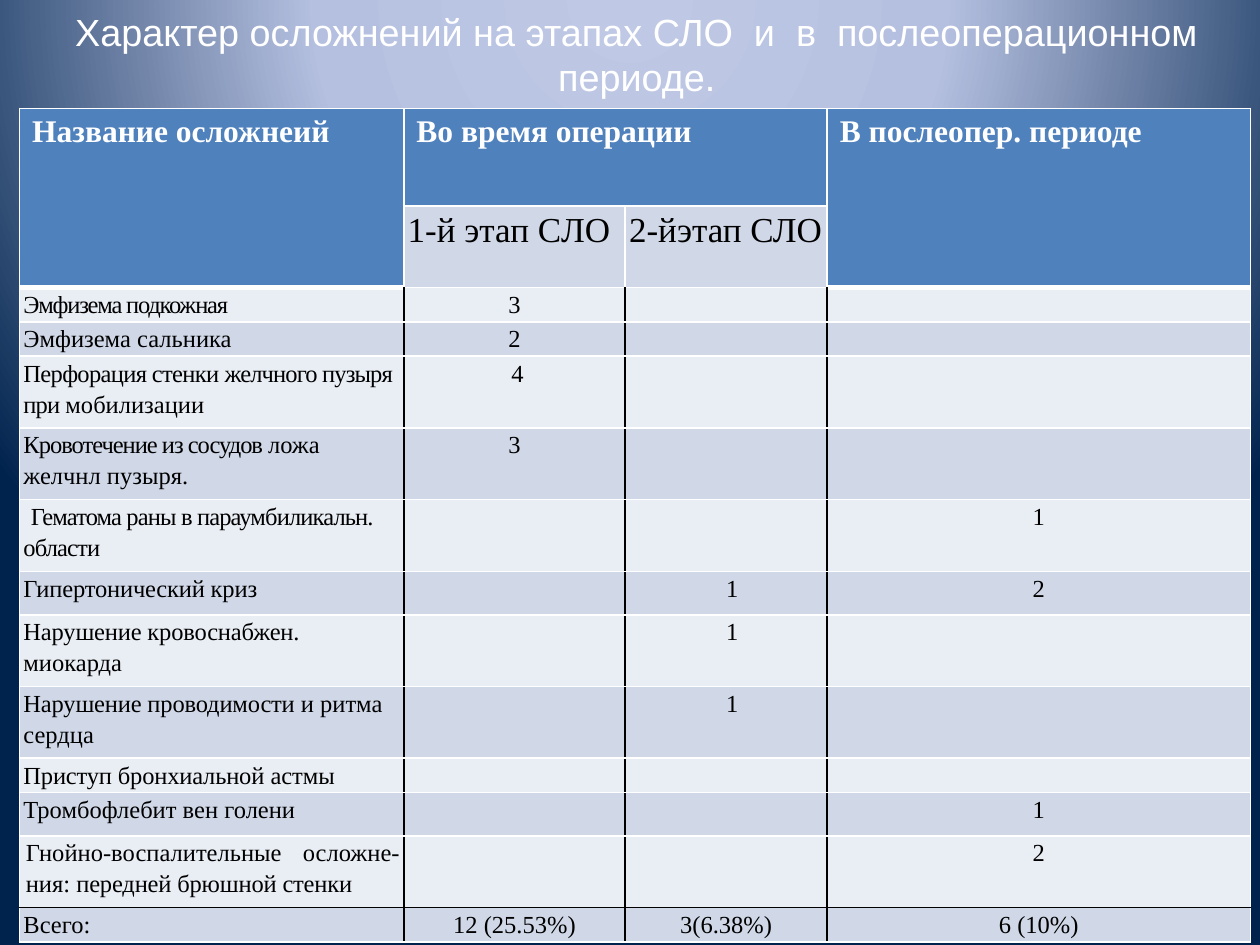
from lxml import etree
from pptx import Presentation
from pptx.dml.color import RGBColor
from pptx.enum.text import MSO_ANCHOR, PP_ALIGN
from pptx.oxml import parse_xml
from pptx.oxml.ns import qn
from pptx.util import Pt

LEFT, MID, JUST = PP_ALIGN.LEFT, PP_ALIGN.CENTER, PP_ALIGN.JUSTIFY
CENTER = MSO_ANCHOR.MIDDLE
SERIF = "Times New Roman"
WHITE, BLACK, BLUE = "FFFFFF", "000000", "4F81BD"
BANDS = ("E9EDF4", "D0D8E8")
COLS = (219.6, 126.5, 115.4, 241.9)
HEADS = (55.7, 46.8)
TITLE = "Характер осложнений на этапах СЛО  и  в  послеоперационном периоде."

# Row height, name runs (text, letter spacing), the three counts
ROWS = [
    (19.6, [("Эмфизема подкожная", -0.7)], ("3", "", "")),
    (19.6, [("Эмфизема сальника", 0)], ("2", "", "")),
    (41, [("Перфорация стенки ", -0.4), ("желчного пузыря при ", -0.5),
          ("мобилизации", 0)], ("4", "", "")),
    (41, [("Кровотечение из сосудов ", -0.6), ("ложа желчнл пузыря.", 0)],
     ("3", "", "")),
    (41, [("Гематома раны в параумбиликальн. области", -0.5)], ("", "", "1")),
    (24.8, [("Гипертонический криз", -0.1)], ("", "1", "2")),
    (41, [("Нарушение кровоснабжен. ", -0.1), ("миокарда", 0)], ("", "1", "")),
    (41, [("Нарушение проводимости ", -0.1), ("и ритма сердца", 0)],
     ("", "1", "")),
    (19.6, [("Приступ бронхиальной ", -0.1), ("астмы", 0)], ("", "", "")),
    (24.8, [("Тромбофлебит вен голени", 0)], ("", "", "1")),
    (41, [("Гнойно-воспалительные осложне-ния: ", 0),
          ("передней брюшной стенки", -0.1)], ("", "", "2")),
    (19.6, [("Всего:", 0)], ("12 (25.53%)", "3(6.38%)", "6 (10%)")),
]
LAST = len(HEADS) + len(ROWS) - 1


def color(code):
    return RGBColor.from_string(code)


def paint(slide):
    """Radial gradient background."""
    stops = ((0, "BFC9E5"), (40, "B5C0E0"), (100, "00234D"))
    marks = "".join(f'<a:gs pos="{at * 1000}"><a:srgbClr val="{code}"/></a:gs>'
                    for at, code in stops)
    slide.element.cSld.insert(0, parse_xml(
        '<p:bg xmlns:p="http://schemas.openxmlformats.org/presentationml/2006/main"'
        ' xmlns:a="http://schemas.openxmlformats.org/drawingml/2006/main">'
        f'<p:bgPr><a:gradFill rotWithShape="1"><a:gsLst>{marks}</a:gsLst>'
        '<a:path path="circle"><a:fillToRect l="50000" t="-80000" r="50000"'
        ' b="180000"/></a:path></a:gradFill><a:effectLst/></p:bgPr></p:bg>'))


def style(para, size, ink, face=SERIF, align=LEFT, bold=False):
    para.alignment = align
    font = para.font
    font.name, font.size, font.bold = face, Pt(size), bold
    font.color.rgb = color(ink)


def add_title(slide):
    box = slide.shapes.add_textbox(Pt(33.8), Pt(0), Pt(660.2), Pt(61.9))
    frame = box.text_frame
    frame.word_wrap = True
    frame.vertical_anchor = CENTER
    para = frame.paragraphs[0]
    para.text = TITLE
    style(para, 21.6, WHITE, "Arial", MID)


def add_edge(cell, side, ink, width):
    line = etree.SubElement(cell._tc.get_or_add_tcPr(), qn(f"a:ln{side}"),
                            w=str(Pt(width)))
    fill = etree.SubElement(line, qn("a:solidFill"))
    etree.SubElement(fill, qn("a:srgbClr"), val=ink)


def dress(cell, row, col):
    """Borders, fill and margins by place in the grid."""
    body = row >= len(HEADS)
    outer = col in (0, len(COLS) - 1)
    head = row == 0 or (not body and outer)
    dark = {"L": body and col > 0, "R": body and col < len(COLS) - 1,
            "T": row == LAST, "B": row == LAST - 1}
    for side, black in dark.items():
        thick = side == "B" and not body and outer
        add_edge(cell, side, BLACK if black else WHITE, 3 if thick else 1)
    cell.fill.solid()
    cell.fill.fore_color.rgb = color(BLUE if head else BANDS[row % 2])
    if not head:
        cell.margin_left = cell.margin_right = Pt(2.2)
        cell.margin_top = cell.margin_bottom = Pt(0)
    # Small mark size keeps empty cells from stretching the row
    para = cell.text_frame.paragraphs[0]
    etree.SubElement(para._p, qn("a:endParaRPr"), sz="1400")


def write(cell, runs, size=14, ink=BLACK, align=LEFT, bold=False, lead=1.15):
    para = cell.text_frame.paragraphs[0]
    for text, gap in runs:
        run = para.add_run()
        run.text = text
        if gap:
            run._r.get_or_add_rPr().set("spc", str(round(gap * 100)))
    style(para, size, ink, align=align, bold=bold)
    para.line_spacing = lead


def indent(cell, left=0, first=0):
    props = cell.text_frame.paragraphs[0]._p.get_or_add_pPr()
    props.set("marL", str(Pt(left)))
    props.set("indent", str(Pt(first)))


def add_grid(slide):
    highs = [*HEADS, *(row[0] for row in ROWS)]
    grid = slide.shapes.add_table(len(highs), len(COLS), Pt(11.2), Pt(61.9),
                                  Pt(sum(COLS)), Pt(sum(highs))).table
    grid.first_row = grid.horz_banding = False
    for col, width in zip(grid.columns, COLS):
        col.width = Pt(width)
    for num, high in enumerate(highs):
        grid.rows[num].height = Pt(high)
        for col in range(len(COLS)):
            dress(grid.cell(num, col), num, col)

    # Header cells
    for start, end in (((0, 0), (1, 0)), ((0, 1), (0, 2)), ((0, 3), (1, 3))):
        grid.cell(*start).merge(grid.cell(*end))
    for col, text in ((0, "Название осложнеий"), (1, "Во время операции"),
                      (3, "В послеопер. периоде")):
        write(grid.cell(0, col), [(text, 0)], 18, WHITE, bold=True, lead=1.0)
    for col, text in ((1, "1-й этап CЛО"), (2, "2-йэтап СЛО")):
        write(grid.cell(1, col), [(text, 0)], 20)

    # Names and counts
    for num, (_, name, counts) in enumerate(ROWS, len(HEADS)):
        write(grid.cell(num, 0), name, align=JUST if num == LAST - 1 else LEFT)
        for col, count in enumerate(counts, 1):
            if count:
                write(grid.cell(num, col), [(count, 0)], align=MID)

    # Cells set off from the rest
    indent(grid.cell(4, 1), left=3.4)
    indent(grid.cell(6, 0), first=4.3)
    for num in (7, 8, 9):
        indent(grid.cell(num, 2), left=6.8)
    indent(grid.cell(LAST - 1, 0), left=1.4)


def main():
    deck = Presentation()
    deck.slide_width, deck.slide_height = Pt(720), Pt(540)
    slide = deck.slides.add_slide(deck.slide_layouts[6])
    paint(slide)
    add_title(slide)
    add_grid(slide)
    deck.save("out.pptx")


if __name__ == "__main__":
    main()
